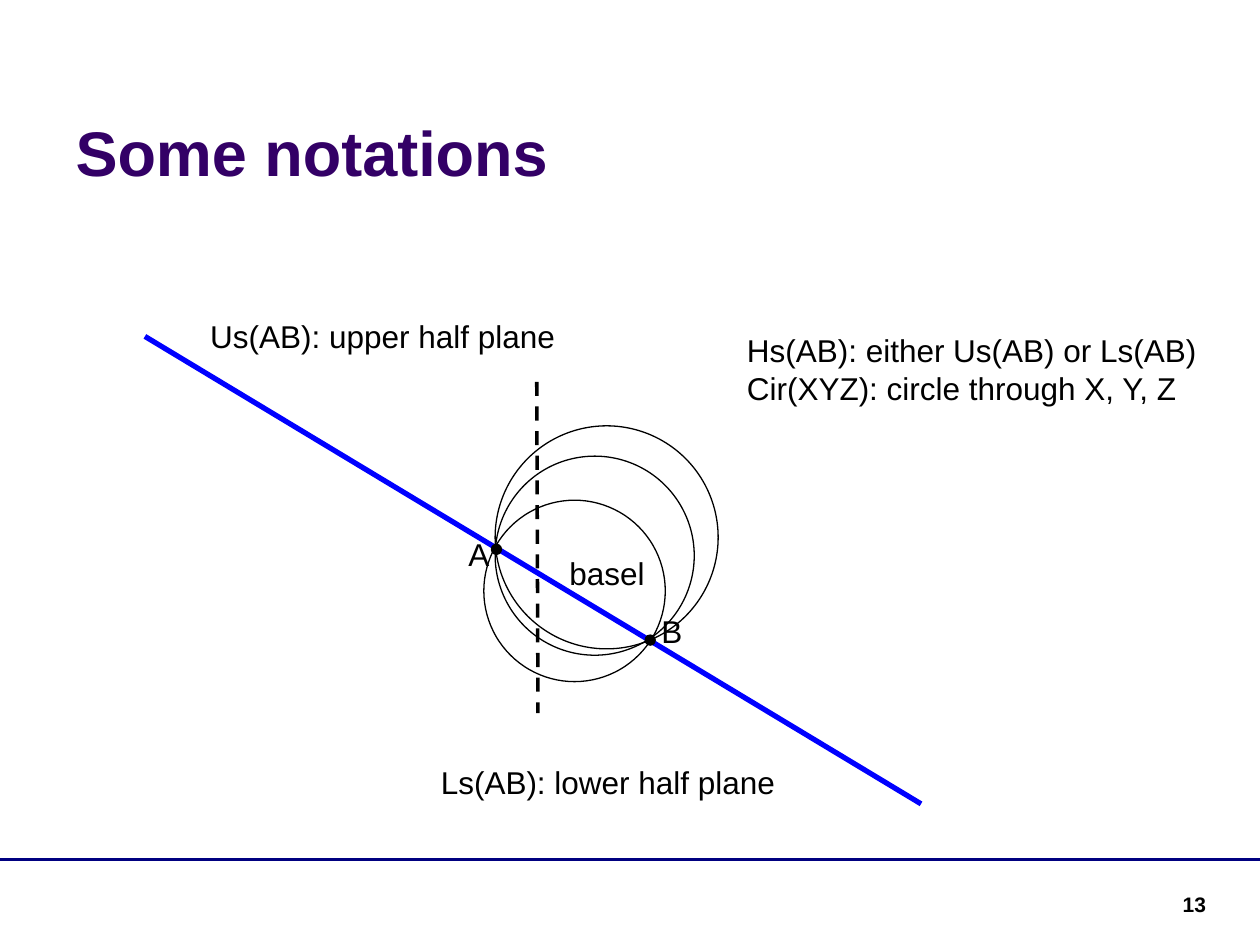
import dataclasses

import pptx
import pptx.dml.color
import pptx.enum.dml
import pptx.enum.shapes
import pptx.enum.text
import pptx.oxml.ns
import pptx.util
from lxml import etree

WIDTH, HEIGHT = pptx.util.Inches(10), pptx.util.Inches(7.5)
COL, ROW = WIDTH / 100, HEIGHT / 75  # grid of 100 columns by 75 rows


@dataclasses.dataclass(frozen=True)
class Theme:
    font: str = "Arial"
    title: str = "330066"
    ink: str = "000000"
    rule: str = "000080"
    base_line: str = "0000FF"
    title_size: int = 36
    label_size: int = 18
    number_size: int = 12
    thin: float = 0.75
    medium: float = 2
    thick: float = 3


@dataclasses.dataclass(frozen=True)
class Box:
    """Area in grid columns and rows."""
    x: float
    y: float
    w: float
    h: float

    def inner(self, x, y, w, h):
        return Box(self.x + x, self.y + y, w, h)

    def emu(self):
        return (round(self.x * COL), round(self.y * ROW),
                round(self.w * COL), round(self.h * ROW))


THEME = Theme()


def rgb(value):
    return pptx.dml.color.RGBColor.from_string(value)


def add_run(p, text, size, color=THEME.ink, bold=False):
    r = p.add_run()
    r.text = text
    r.font.name, r.font.size, r.font.bold = THEME.font, pptx.util.Pt(size), bold
    r.font.color.rgb = rgb(color)


def add_label(s, box, lines, size=THEME.label_size, bold=False, align=None):
    tf = s.shapes.add_textbox(*box.emu()).text_frame
    tf.word_wrap = True
    for i, line in enumerate(lines):
        p = tf.add_paragraph() if i else tf.paragraphs[0]
        p.alignment = align
        add_run(p, line, size, bold=bold)


def add_line(s, box, start, end, color, width, dash=None):
    x1, y1, _, _ = box.inner(*start, 0, 0).emu()
    x2, y2, _, _ = box.inner(*end, 0, 0).emu()
    line = s.shapes.add_connector(
        pptx.enum.shapes.MSO_CONNECTOR.STRAIGHT, x1, y1, x2, y2)
    line.line.color.rgb = rgb(color)
    line.line.width = pptx.util.Pt(width)
    if dash:
        line.line.dash_style = dash
    etree.SubElement(line._element.spPr, pptx.oxml.ns.qn("a:effectLst"))


def add_circle(s, box, center, radius, filled=False):
    x, y = center
    area = box.inner(x - radius, y - radius, 2 * radius, 2 * radius)
    sp = s.shapes.add_shape(pptx.enum.shapes.MSO_SHAPE.OVAL, *area.emu())
    sp.shadow.inherit = False
    sp.line.color.rgb = rgb(THEME.ink)
    sp.line.width = pptx.util.Pt(THEME.thin)
    if filled:
        sp.fill.solid()
        sp.fill.fore_color.rgb = rgb(THEME.ink)
    else:
        sp.fill.background()


def build_title(s, box, text):
    title = s.shapes.title
    title.left, title.top, title.width, title.height = box.emu()
    tf = title.text_frame
    tf.vertical_anchor = pptx.enum.text.MSO_ANCHOR.BOTTOM
    p = tf.paragraphs[0]
    p.alignment = pptx.enum.text.PP_ALIGN.LEFT
    add_run(p, text, THEME.title_size, THEME.title, bold=True)


def build_footer(s, box, number):
    add_line(s, box, (0, 0), (box.w, 0), THEME.rule, THEME.medium)
    add_label(s, box.inner(83.5, 2.1, 13.2, 2.8), [number], THEME.number_size,
              bold=True, align=pptx.enum.text.PP_ALIGN.RIGHT)


def build_diagram(s, box):
    # Perpendicular divider and the line through A and B
    add_line(s, box, (32.6, 10.3), (32.7, 36.6), THEME.ink, THEME.medium,
             pptx.enum.dml.MSO_LINE.DASH)
    add_line(s, box, (63.1, 43.8), (1.5, 6.7), THEME.base_line, THEME.thick)

    # Circles through A and B
    for center, radius in (((35.6, 26.9), 7.2), ((37.2, 24.1), 7.9),
                           ((38.15, 22.65), 8.85)):
        add_circle(s, box, center, radius)

    # Points A and B
    for center in ((29.4, 23.6), (41.6, 30.8)):
        add_circle(s, box, center, 0.4, filled=True)

    # Labels
    for text, x, y, w in (("basel", 34.2, 23.5, 9.4),
                          ("A", 26.2, 22, 9.4),
                          ("B", 41.5, 28.1, 9.4),
                          ("Us(AB): upper half plane", 5.7, 4.7, 36.2),
                          ("Ls(AB): lower half plane", 24, 40.1, 36.2)):
        add_label(s, box.inner(x, y, w, 4), [text])


def build_definitions(s, box):
    add_label(s, box, ["Hs(AB): either Us(AB) or Ls(AB)",
                       "Cir(XYZ): circle through X, Y, Z"])


def main():
    prs = pptx.Presentation()
    prs.slide_width, prs.slide_height = WIDTH, HEIGHT
    s = prs.slides.add_slide(prs.slide_layouts.get_by_name("Title Only"))
    build_footer(s, Box(0, 68.2, 100, 6.8), "13")
    build_title(s, Box(5, 1.3, 93, 14.2), "Some notations")
    build_diagram(s, Box(10, 20, 65, 45))
    build_definitions(s, Box(58.3, 25.8, 40.4, 7.1))
    prs.save("out.pptx")


if __name__ == "__main__":
    main()
